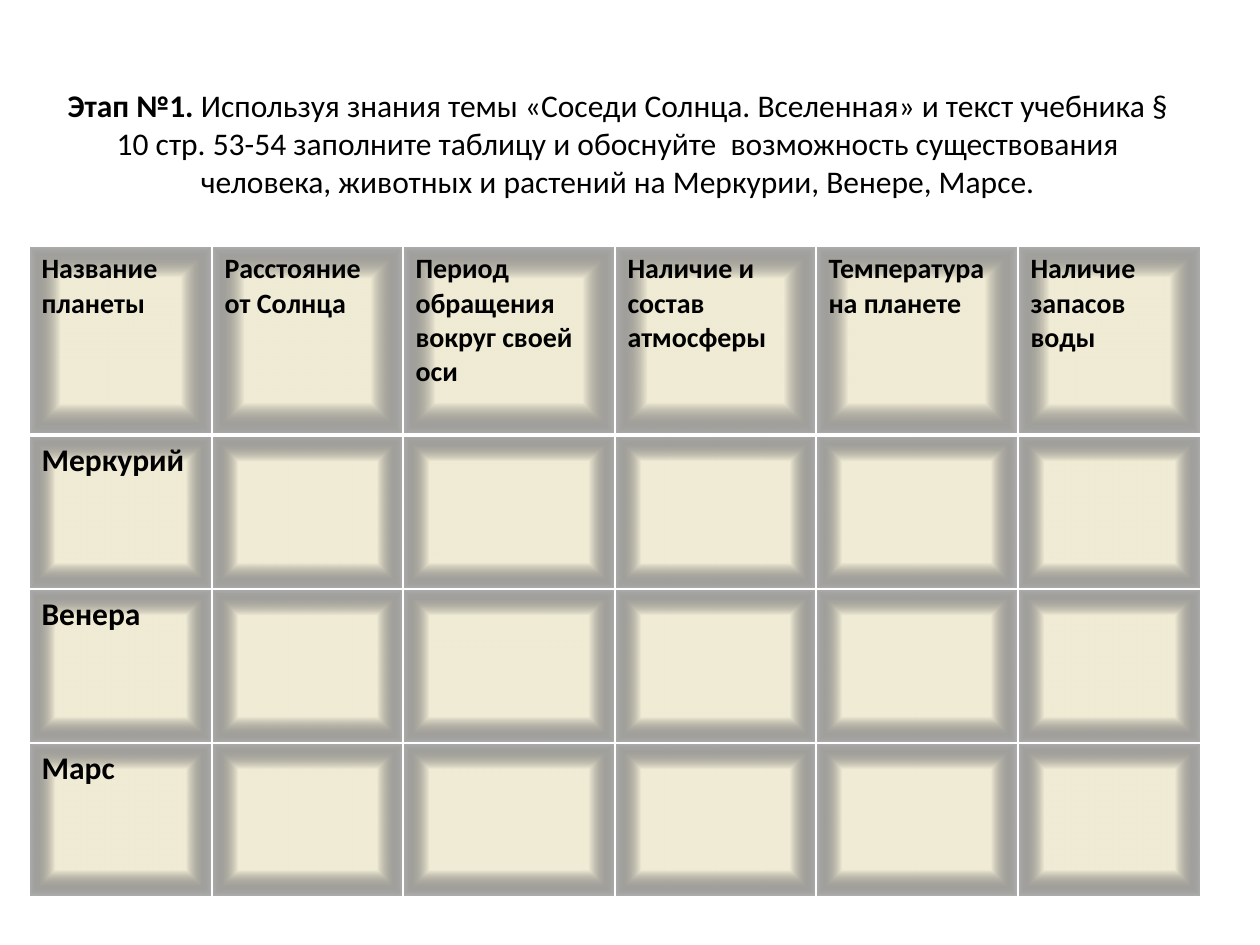
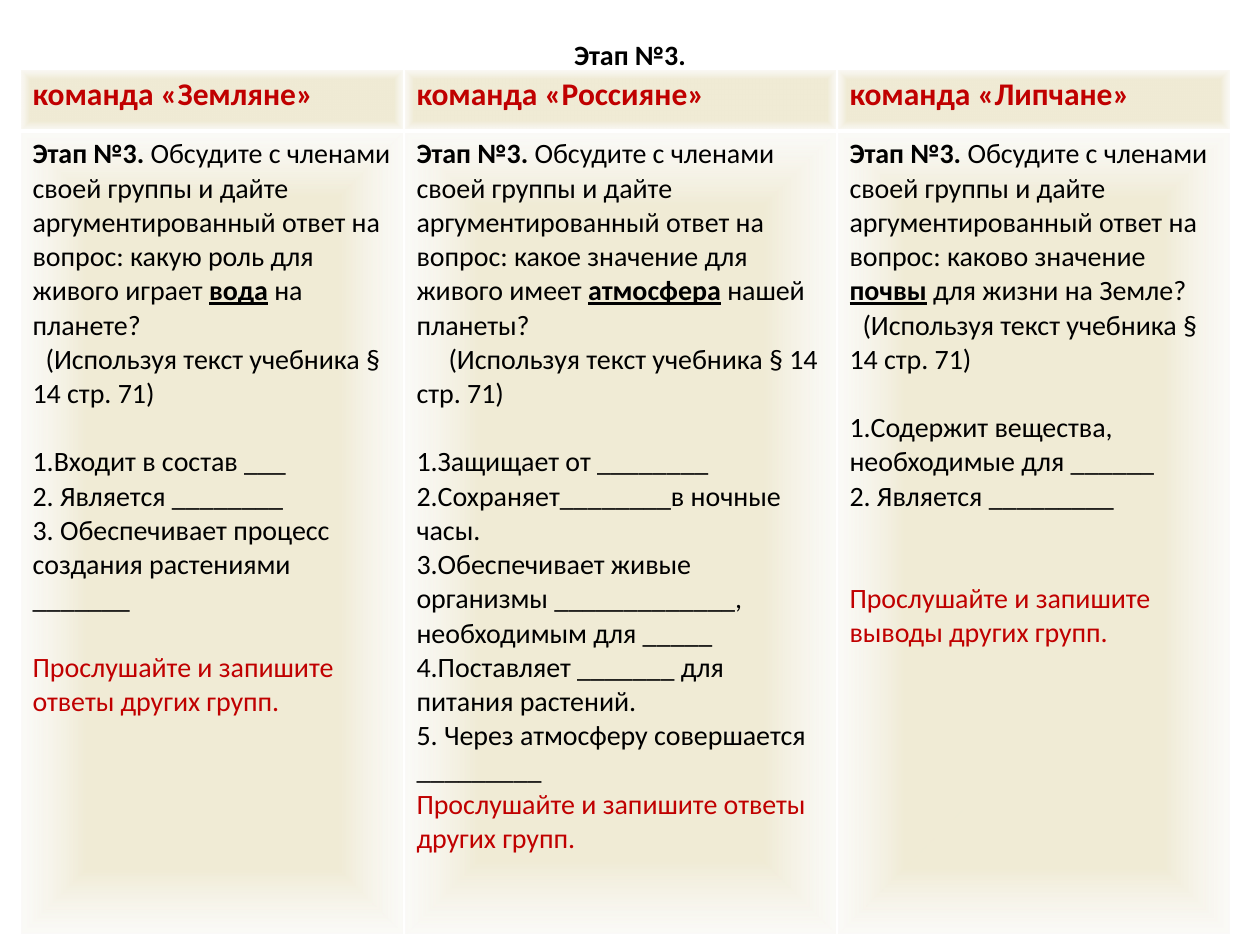
import pptx
import pptx.util
import pptx.dml.color
import pptx.enum.text
import pptx.oxml
import pptx.oxml.ns

RGB = pptx.dml.color.RGBColor
BLACK = RGB(0x00, 0x00, 0x00)
WHITE = RGB(0xFF, 0xFF, 0xFF)
RED = RGB(0xC0, 0x00, 0x00)
CREAM = RGB(0xF0, 0xEB, 0xD5)
SAND = RGB(0xD1, 0xC3, 0x9F)
PALE = RGB(0xF8, 0xF7, 0xF3)
FONT = "Calibri"
LINE_PT = 19.5  # height of one 16 pt line

PLANET_HEADS = ["Название планеты", "Расстояние от Солнца",
                "Период обращения вокруг своей оси",
                "Наличие и состав атмосферы", "Температура на планете",
                "Наличие запасов воды"]
PLANETS = ["Меркурий", "Венера", "Марс"]

# team, question, key word, rest of question, indent, answers,
# blank lines before the closing task, its subject
TEAMS = [
    ("Земляне", "какую роль для живого играет ", "вода", " на планете?", 13,
     ["1.Входит в состав ___", "2. Является ________",
      "3. Обеспечивает процесс создания растениями _______"], 1, "ответы"),
    ("Россияне", "какое значение для живого имеет ", "атмосфера",
     " нашей планеты?", 32,
     ["1.Защищает от ________", "2.Сохраняет________в ночные часы.",
      "3.Обеспечивает живые организмы _____________, необходимым для _____",
      "4.Поставляет _______ для питания растений.",
      "5. Через атмосферу совершается _________"], 0, "ответы"),
    ("Липчане", "каково значение ", "почвы", " для жизни на Земле?", 13,
     ["1.Содержит вещества, необходимые для ______",
      "2. Является _________"], 2, "выводы"),
]


def px(n):
    return pptx.util.Emu(round(n * 914400 / 126))


def add_run(p, text, size, bold=False, color=BLACK, underline=False):
    r = p.add_run()
    r.text = text
    r.font.name = FONT
    r.font.size = pptx.util.Pt(size)
    r.font.bold = bold
    r.font.underline = underline
    r.font.color.rgb = color


def add_paragraph(tf, text, size=16, color=BLACK, gap=0, indent=0):
    """Append a plain paragraph, gap lines below the one before."""
    p = tf.add_paragraph()
    p.space_before = pptx.util.Pt(gap * LINE_PT)
    if indent:
        p._p.get_or_add_pPr().set("indent", str(px(indent)))
    add_run(p, text, size, color=color)


def add_title(s, box, runs, size, bottom=6):
    tf = s.shapes.add_textbox(*map(px, box)).text_frame
    tf.word_wrap = True
    tf.vertical_anchor = pptx.enum.text.MSO_ANCHOR.MIDDLE
    tf.margin_bottom = px(bottom)
    p = tf.paragraphs[0]
    p.alignment = pptx.enum.text.PP_ALIGN.CENTER
    for text, bold in runs:
        add_run(p, text, size, bold)


def style_cell(cell, edge, opacity, is_head):
    """White borders and a gradient that runs from the centre to the edge."""
    tcPr = cell._tc.get_or_add_tcPr()
    ns = pptx.oxml.ns.nsdecls("a")
    for side in "LRTB":
        width = pptx.util.Pt(3 if is_head and side == "B" else 1)
        tcPr.append(pptx.oxml.parse_xml(
            f'<a:ln{side} {ns} w="{width}"><a:solidFill>'
            f'<a:srgbClr val="{WHITE}"/></a:solidFill></a:ln{side}>'))
    tcPr.append(pptx.oxml.parse_xml(
        f'<a:gradFill {ns}><a:gsLst>'
        f'<a:gs pos="65000"><a:srgbClr val="{CREAM}"/></a:gs>'
        f'<a:gs pos="100000"><a:srgbClr val="{edge}">'
        f'<a:alpha val="{opacity * 1000}"/></a:srgbClr></a:gs>'
        f'<a:gs pos="100000"><a:srgbClr val="{SAND}"/></a:gs></a:gsLst>'
        '<a:path path="shape"><a:fillToRect l="50000" t="50000" '
        'r="50000" b="50000"/></a:path></a:gradFill>'))


def add_grid(s, left, top, widths, heights, edge, opacity):
    table = s.shapes.add_table(
        len(heights), len(widths), px(left), px(top),
        px(sum(widths)), px(sum(heights))).table
    table.horz_banding = False
    table.first_row = False
    for col, width in zip(table.columns, widths):
        col.width = px(width)
    for i, (row, height) in enumerate(zip(table.rows, heights)):
        row.height = px(height)
        for cell in row.cells:
            style_cell(cell, edge, opacity, i == 0)
    return table


def add_planets_slide(prs):
    s = prs.slides.add_slide(prs.slide_layouts[6])
    add_title(s, (39, 98, 1158, 138), [
        ("Этап №1. ", True),
        ("Используя знания темы «Соседи Солнца. Вселенная» и текст учебника "
         "§ 10 стр. 53-54 заполните таблицу и обоснуйте  возможность "
         "существования человека, животных и растений на Меркурии, Венере, "
         "Марсе.", False)], 18, bottom=54)
    table = add_grid(s, 29, 246, [183, 191, 212, 201, 202, 183],
                     [189] + [154] * len(PLANETS), BLACK, 30)
    for i, head in enumerate(PLANET_HEADS):
        add_run(table.cell(0, i).text_frame.paragraphs[0], head, 16, True)
    for i, planet in enumerate(PLANETS, 1):
        add_run(table.cell(i, 0).text_frame.paragraphs[0], planet, 18, True)


def fill_team(table, col, team):
    name, question, key, rest, indent, answers, gap, subject = team
    add_run(table.cell(0, col).text_frame.paragraphs[0],
            f"команда «{name}»", 18, True, RED)
    tf = table.cell(1, col).text_frame
    p = tf.paragraphs[0]
    add_run(p, "Этап №3. ", 16, True)
    add_run(p, "Обсудите с членами своей группы и дайте аргументированный "
               f"ответ на вопрос: {question}", 16)
    add_run(p, key, 16, True, underline=True)
    add_run(p, rest, 16)
    add_paragraph(tf, "(Используя текст учебника § 14 стр. 71)", indent=indent)
    for i, answer in enumerate(answers):
        add_paragraph(tf, answer, gap=1 if i == 0 else 0)
    add_paragraph(tf, f"Прослушайте и запишите {subject} других групп.",
                  color=RED, gap=gap)


def add_teams_slide(prs):
    s = prs.slides.add_slide(prs.slide_layouts[6])
    add_title(s, (63, 20, 1134, 69), [("Этап №3.", True)], 16)
    table = add_grid(s, 20, 69, [384, 433, 394], [62, 804], PALE, 56)
    for col, team in enumerate(TEAMS):
        fill_team(table, col, team)


def main():
    prs = pptx.Presentation()
    prs.slide_width, prs.slide_height = px(1260), px(945)
    add_planets_slide(prs)
    add_teams_slide(prs)
    prs.save("out.pptx")


if __name__ == "__main__":
    main()
